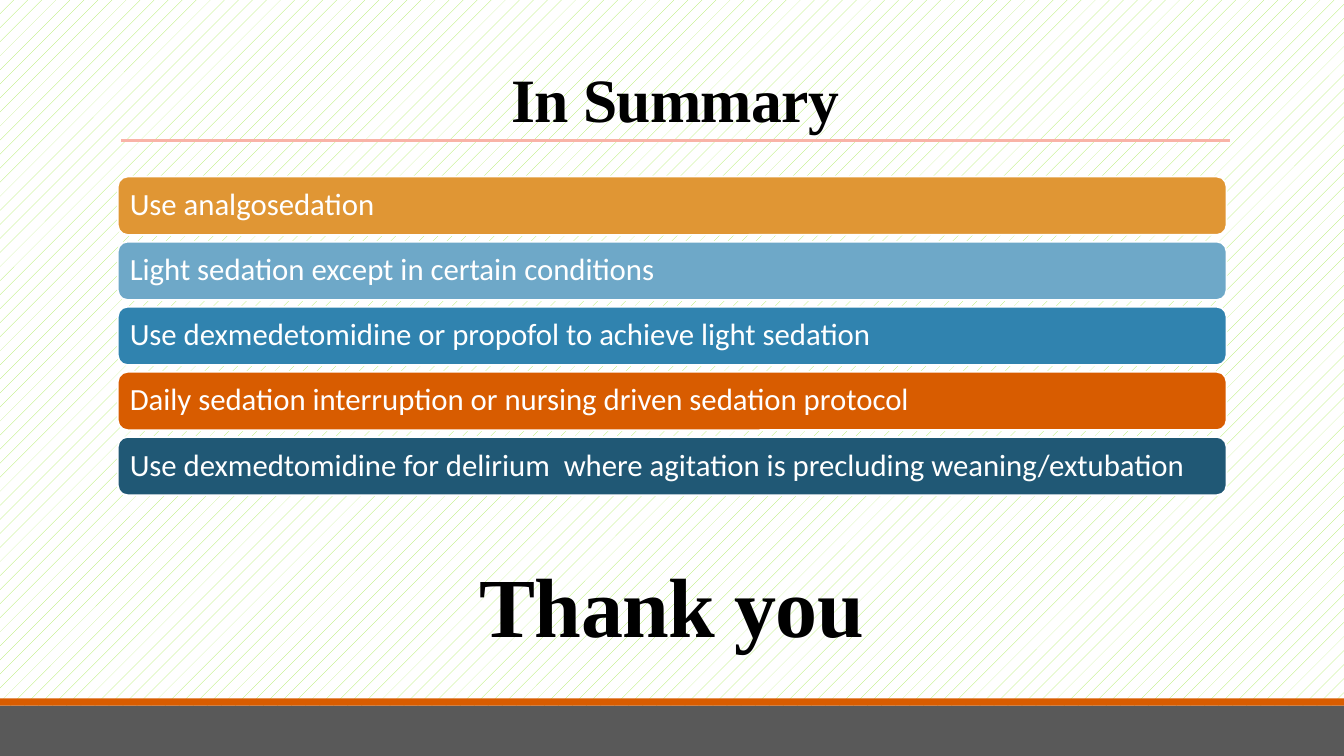
from collections import namedtuple

from lxml.etree import SubElement
from pptx import Presentation
from pptx.dml.color import RGBColor
from pptx.enum.dml import MSO_PATTERN
from pptx.enum.shapes import MSO_CONNECTOR, MSO_SHAPE
from pptx.enum.text import MSO_ANCHOR, MSO_AUTO_SIZE, PP_ALIGN
from pptx.oxml.ns import qn
from pptx.util import Cm, Pt

COLORS = {
    "white": "FFFFFF",
    "black": "000000",
    "pattern": "A7EA52",
    "gray": "595959",
    "rule": "F9B3A7",
    "amber": "E09634",
    "sky": "6EA8C8",
    "blue": "3083AF",
    "orange": "D85C00",
    "navy": "205875",
}
POINTS = [
    ("Use analgosedation", "amber"),
    ("Light sedation except in certain conditions", "sky"),
    ("Use dexmedetomidine or propofol to achieve light sedation", "blue"),
    ("Daily sedation interruption or nursing driven sedation protocol", "orange"),
    ("Use dexmedtomidine for delirium  where agitation is precluding weaning/extubation", "navy"),
]
Box = namedtuple("Box", "left top width height")


def color(name):
    return RGBColor.from_string(COLORS[name])


def place(shape, box):
    shape.left, shape.top, shape.width, shape.height = (Cm(length) for length in box)


def add_block(page, kind, box, fill):
    block = page.shapes.add_shape(kind, *(Cm(length) for length in box))
    block.shadow.inherit = False
    block.fill.solid()
    block.fill.fore_color.rgb = color(fill)
    block.line.fill.background()
    return block


def paint_background(page):
    fill = page.background.fill
    fill.patterned()
    fill.pattern = MSO_PATTERN.PERCENT_5
    fill.fore_color.rgb = color("pattern")
    fill.back_color.rgb = color("white")


def add_footer(page, box):
    stripe = 0.18
    add_block(page, MSO_SHAPE.RECTANGLE,
              Box(box.left, box.top + stripe, box.width, box.height - stripe), "gray")
    add_block(page, MSO_SHAPE.RECTANGLE, box._replace(height=stripe), "orange")


def write_heading(shape, box, text, size):
    place(shape, box)
    frame = shape.text_frame
    frame.word_wrap = True
    frame.auto_size = MSO_AUTO_SIZE.NONE
    frame.vertical_anchor = MSO_ANCHOR.BOTTOM
    para = frame.paragraphs[0]
    para.alignment = PP_ALIGN.CENTER
    para.line_spacing = 0.85
    span = para.add_run()
    span.text = text
    span.font._element.set("spc", "-50")
    para.font.name = "Times New Roman"
    para.font.size = Pt(size)
    para.font.bold = True
    para.font.color.rgb = color("black")


def add_title(page, box):
    write_heading(page.shapes.title, box, "In Summary", 44)
    bottom = Cm(box.top + box.height)
    rule = page.shapes.add_connector(
        MSO_CONNECTOR.STRAIGHT, Cm(box.left), bottom, Cm(box.left + box.width), bottom)
    rule.line.color.rgb = color("rule")
    rule.line.width = Pt(2.25)
    SubElement(rule._element.spPr, qn("a:effectLst"))


def add_points(page, box):
    height = 1.47
    pitch = (box.height - height) / (len(POINTS) - 1)
    for index, (text, fill) in enumerate(POINTS):
        bar = add_block(page, MSO_SHAPE.ROUNDED_RECTANGLE,
                        Box(box.left, box.top + index * pitch, box.width, height), fill)
        bar.line.color.rgb = color("white")
        bar.line.width = Pt(1.25)
        frame = bar.text_frame
        frame.word_wrap = True
        frame.vertical_anchor = MSO_ANCHOR.MIDDLE
        frame.margin_left = frame.margin_right = Cm(0.23)
        frame.margin_top = frame.margin_bottom = Cm(0.2)
        para = frame.paragraphs[0]
        para.text = text
        para.alignment = PP_ALIGN.LEFT
        para.line_spacing = 0.9
        para.font.name = "Calibri"
        para.font.size = Pt(22)
        para.font.color.rgb = color("white")


def add_closing(page, box):
    closing = page.shapes.add_textbox(*(Cm(length) for length in box))
    write_heading(closing, box, "Thank you", 60)


def add_summary_page(deck):
    page = deck.slides.add_slide(deck.slide_layouts[5])
    paint_background(page)
    add_footer(page, Box(0, 17.6, 33.87, 1.45))
    add_title(page, Box(3.05, 0.79, 27.94, 2.74))
    add_points(page, Box(2.97, 4.45, 27.94, 8.03))
    add_closing(page, Box(1.78, 13.67, 30.3, 2.95))


def main():
    deck = Presentation()
    deck.slide_width = Cm(33.87)
    deck.slide_height = Cm(19.05)
    add_summary_page(deck)
    deck.save("out.pptx")


if __name__ == "__main__":
    main()
